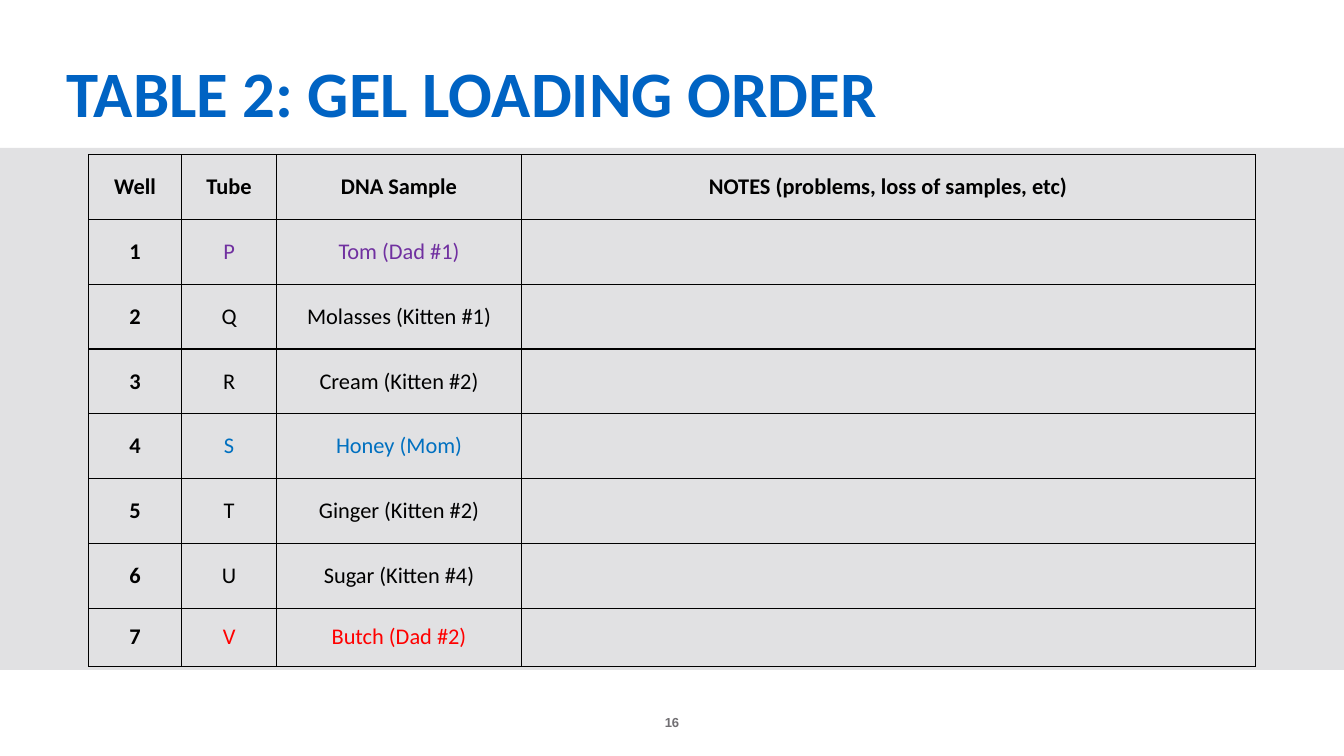
"""Build the gel loading order slide."""
from lxml import etree
from pptx import Presentation
from pptx.dml.color import RGBColor
from pptx.enum.shapes import MSO_SHAPE
from pptx.enum.text import MSO_ANCHOR, PP_ALIGN
from pptx.oxml.ns import qn
from pptx.util import Inches, Pt

RECT = MSO_SHAPE.RECTANGLE
MIDDLE, BOTTOM = MSO_ANCHOR.MIDDLE, MSO_ANCHOR.BOTTOM
LEFT, CENTER = PP_ALIGN.LEFT, PP_ALIGN.CENTER

WIDTH = Inches(10)
HEIGHT = WIDTH * 9 // 16
BLACK, PURPLE, BLUE, RED = "000000", "7030A0", "0070C0", "FF0000"

HEADERS = ["Well", "Tube", "DNA Sample", "NOTES (problems, loss of samples, etc)"]
SAMPLES = [
    ("P", "Tom (Dad #1)", PURPLE),
    ("Q", "Molasses (Kitten #1)", BLACK),
    ("R", "Cream (Kitten #2)", BLACK),
    ("S", "Honey (Mom)", BLUE),
    ("T", "Ginger (Kitten #2)", BLACK),
    ("U", "Sugar (Kitten #4)", BLACK),
    ("V", "Butch (Dad #2)", RED),
]
COLUMN_SHARES = [6.9, 7.1, 18.2, 54.6]
ROW_SHARE, LAST_ROW_SHARE = 8.58, 7.66


def color(hex_code):
    """Turn a hex string into a colour."""
    return RGBColor.from_string(hex_code)


def across(share):
    """Give a length as a percentage of the slide width."""
    return int(WIDTH * share / 100)


def down(share):
    """Give a length as a percentage of the slide height."""
    return int(HEIGHT * share / 100)


def place(x, y, w, h):
    """Turn percentages of the slide into left, top, width and height."""
    return across(x), down(y), across(w), down(h)


def style_font(font, size, hex_code, bold=True, name="Calibri"):
    """Set the typeface, size, weight and colour of a font."""
    font.name, font.size, font.bold = name, Pt(size), bold
    font.color.rgb = color(hex_code)


def add_band(s, box, fill):
    """Add a plain filled rectangle."""
    shape = s.shapes.add_shape(RECT, *box)
    shape.shadow.inherit = False
    shape.fill.solid()
    shape.fill.fore_color.rgb = color(fill)
    shape.line.fill.background()


def add_text(s, box, text, size, hex_code, align=LEFT, name="Calibri", insets=(0, 0)):
    """Add a bold line of text that sits at the bottom of its box."""
    tf = s.shapes.add_textbox(*box).text_frame
    tf.word_wrap = True
    tf.vertical_anchor = BOTTOM
    tf.margin_left = tf.margin_right = Inches(insets[0])
    tf.margin_top = tf.margin_bottom = Inches(insets[1])
    tf.text = text
    p = tf.paragraphs[0]
    p.alignment = align
    style_font(p.runs[0].font, size, hex_code, name=name)


def add_borders(cell):
    """Draw a thin black line on each side of a cell."""
    tc_pr = cell._tc.get_or_add_tcPr()
    for side in ("a:lnL", "a:lnR", "a:lnT", "a:lnB"):
        line = etree.SubElement(tc_pr, qn(side), w=str(Pt(0.75)))
        fill = etree.SubElement(line, qn("a:solidFill"))
        etree.SubElement(fill, qn("a:srgbClr"), val=BLACK)


def fill_cell(cell, text, hex_code, bold):
    """Write centred text in a bordered, transparent cell."""
    add_borders(cell)
    cell.fill.background()
    cell.vertical_anchor = MIDDLE
    cell.margin_left = cell.margin_right = Inches(0.07)
    cell.margin_top = cell.margin_bottom = Inches(0.07)
    cell.text = text
    p = cell.text_frame.paragraphs[0]
    p.alignment = CENTER
    for r in p.runs:
        style_font(r.font, 12, hex_code, bold)
    if not text:
        etree.SubElement(p._p, qn("a:endParaRPr"), sz="1200")


def add_loading_table(s):
    """Add the table of wells, tubes and samples with room for notes."""
    rows = [(HEADERS, BLACK)]
    for well, (tube, sample, hex_code) in enumerate(SAMPLES, 1):
        rows.append(([str(well), tube, sample, ""], hex_code))
    heights = [ROW_SHARE] * len(SAMPLES) + [LAST_ROW_SHARE]
    box = place(6.6, 20.45, sum(COLUMN_SHARES), sum(heights))
    table = s.shapes.add_table(len(rows), len(HEADERS), *box).table
    table.horz_banding = False
    for column, share in zip(table.columns, COLUMN_SHARES):
        column.width = across(share)
    for i, (texts, hex_code) in enumerate(rows):
        table.rows[i].height = down(heights[i])
        for j, text in enumerate(texts):
            strong = i == 0 or j == 0
            fill_cell(table.cell(i, j), text, BLACK if strong else hex_code, strong)


def main():
    """Build and save the slide."""
    prs = Presentation()
    prs.slide_width, prs.slide_height = WIDTH, HEIGHT
    s = prs.slides.add_slide(prs.slide_layouts[6])
    add_text(s, place(45.45, 91.28, 9.1, 5.34), "16", 7, "716F73", CENTER, "Arial")
    add_band(s, place(0, 19.58, 100, 69.04), "E1E1E3")
    add_text(s, place(4, 6.05, 92, 12.1), "TABLE 2: GEL LOADING ORDER", 34.7, "0063C3",
             insets=(0.1, 0.05))
    add_loading_table(s)
    prs.save("out.pptx")


if __name__ == "__main__":
    main()
